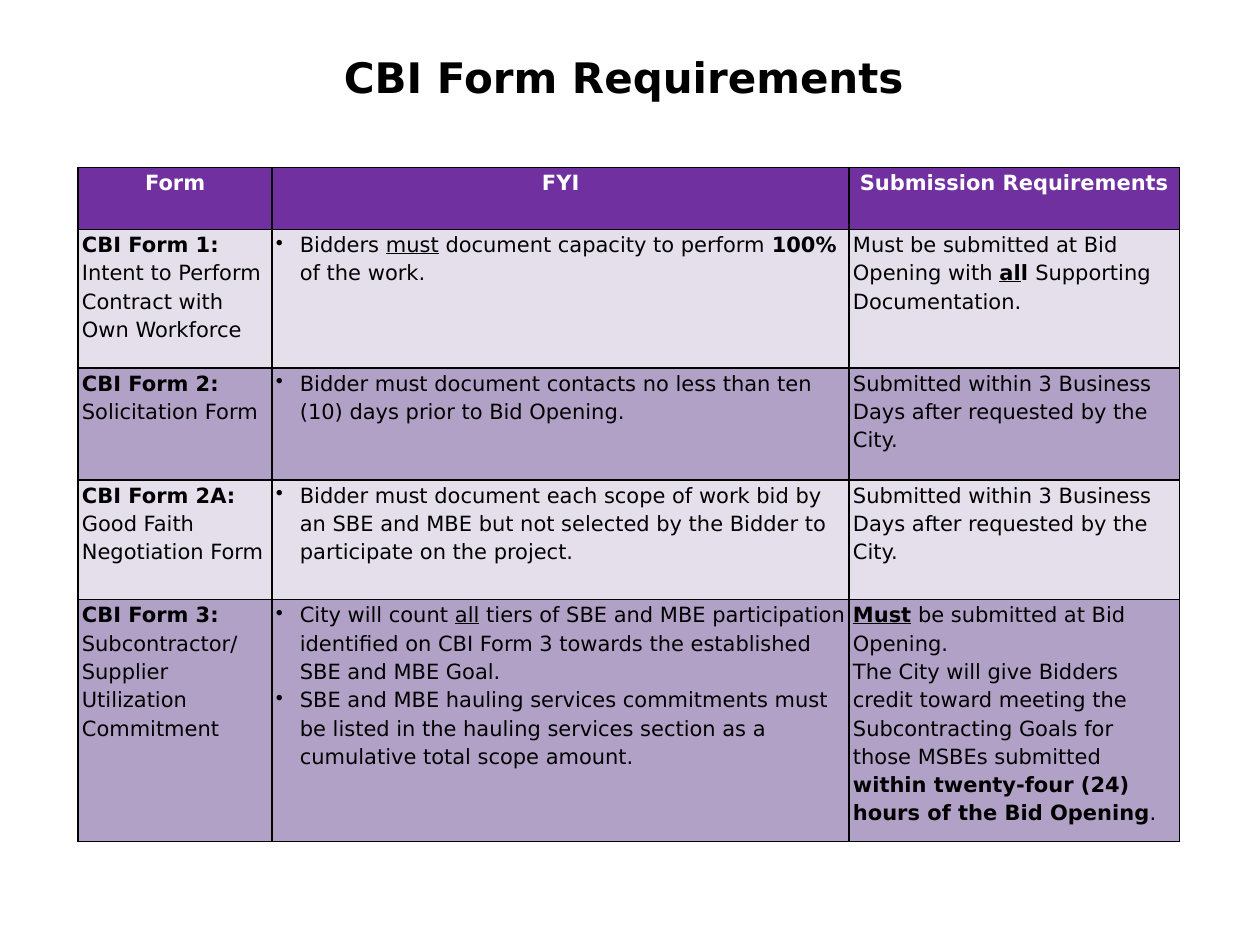
from lxml import etree
from pptx import Presentation
from pptx.dml.color import RGBColor
from pptx.enum import text
from pptx.oxml import ns
from pptx.util import Inches, Pt

FONT = "DejaVu Sans"
BLACK = RGBColor(0x00, 0x00, 0x00)
WHITE = RGBColor(0xFF, 0xFF, 0xFF)
PURPLE = RGBColor(0x70, 0x30, 0xA0)
BANDS = (RGBColor(0xE5, 0xDF, 0xEC), RGBColor(0xB2, 0xA1, 0xC7))

TITLE = "CBI Form Requirements"
HEADERS = ("Form", "FYI", "Submission Requirements")
COLUMN_WIDTHS = (1.54, 4.58, 2.62)
ROW_HEIGHTS = (0.49, 1.1, 0.89, 0.95, 1.92)
FYI_COLUMN = 1

# Each cell lists paragraphs; each paragraph lists (text, style) runs,
# where style holds "b" for bold and "u" for underline.
WITHIN_THREE_DAYS = [
    [("Submitted within 3 Business Days after requested by the City.", "")]]
ROWS = [
    ([[("CBI Form 1:", "b"),
       (" Intent to Perform Contract with Own Workforce", "")]],
     [[("Bidders ", ""), ("must", "u"),
       (" document capacity to perform ", ""), ("100% ", "b"),
       ("of the work.", "")]],
     [[("Must be submitted at Bid Opening with ", ""), ("al", "bu"),
       ("l ", "b"), ("Supporting Documentation.", "")]]),
    ([[("CBI Form 2: ", "b"), ("Solicitation Form", "")]],
     [[("Bidder must document contacts no less than ten (10) days prior "
        "to Bid Opening.", "")]],
     WITHIN_THREE_DAYS),
    ([[("CBI Form 2A:", "b"), (" Good Faith Negotiation Form", "")]],
     [[("Bidder must document each scope of work bid by an SBE and MBE but "
        "not selected by the Bidder to participate on the project.", "")]],
     WITHIN_THREE_DAYS),
    ([[("CBI Form 3: ", "b"), ("Subcontractor/", "")],
      [("Supplier Utilization Commitment", "")]],
     [[("City will count ", ""), ("all", "u"),
       (" tiers of SBE and MBE participation identified on CBI Form 3 "
        "towards the established SBE and MBE Goal.", "")],
      [("SBE and MBE hauling services commitments must be listed in the "
        "hauling services section as a cumulative total scope amount.", "")]],
     [[("Must", "bu"), (" be submitted at Bid Opening.", "")],
      [("The City will give Bidders credit toward meeting the "
        "Subcontracting Goals for those MSBEs submitted ", ""),
       ("within twenty-four (24) hours of the Bid Opening", "b"),
       (".", "")]]),
]


def set_font(paragraph, size, color):
    paragraph.font.name = FONT
    paragraph.font.size = Pt(size)
    paragraph.font.color.rgb = color


def add_bullet(paragraph):
    properties = paragraph._p.get_or_add_pPr()
    properties.set("marL", str(Inches(0.19)))
    properties.set("indent", str(-Inches(0.19)))
    etree.SubElement(properties, ns.qn("a:buChar"), char="•")


def add_borders(cell):
    properties = cell._tc.get_or_add_tcPr()
    for index, side in enumerate(("lnL", "lnR", "lnT", "lnB")):
        line = etree.Element(ns.qn(f"a:{side}"), w=str(Pt(1)))
        fill = etree.SubElement(line, ns.qn("a:solidFill"))
        etree.SubElement(fill, ns.qn("a:srgbClr"), val=str(BLACK))
        properties.insert(index, line)


def fill_cell(cell, paragraphs, fill, color, centered=False, bulleted=False):
    cell.margin_left = cell.margin_right = Inches(0.03)
    cell.margin_top = cell.margin_bottom = 0
    cell.fill.solid()
    cell.fill.fore_color.rgb = fill
    add_borders(cell)
    frame = cell.text_frame
    for index, runs in enumerate(paragraphs):
        paragraph = frame.add_paragraph() if index else frame.paragraphs[0]
        paragraph.line_spacing = 1.15
        if centered:
            paragraph.alignment = text.PP_ALIGN.CENTER
        if bulleted:
            add_bullet(paragraph)
        set_font(paragraph, 12, color)
        for words, style in runs:
            run = paragraph.add_run()
            run.text = words
            run.font.bold = "b" in style
            run.font.underline = "u" in style


def add_title(slide):
    box = slide.shapes.add_textbox(
        Inches(2.24), Inches(0.33), Inches(5.42), Inches(1))
    frame = box.text_frame
    frame.word_wrap = True
    frame.margin_top = Inches(0.08)
    paragraph = frame.paragraphs[0]
    paragraph.text = TITLE
    paragraph.alignment = text.PP_ALIGN.CENTER
    set_font(paragraph, 24, BLACK)
    paragraph.font.bold = True


def add_requirements_table(slide):
    table = slide.shapes.add_table(
        len(ROW_HEIGHTS), len(COLUMN_WIDTHS), Inches(0.62), Inches(1.33),
        Inches(sum(COLUMN_WIDTHS)), Inches(sum(ROW_HEIGHTS))).table
    for column, width in zip(table.columns, COLUMN_WIDTHS):
        column.width = Inches(width)
    for row, height in zip(table.rows, ROW_HEIGHTS):
        row.height = Inches(height)

    for column, header in enumerate(HEADERS):
        fill_cell(table.cell(0, column), [[(header, "b")]], PURPLE, WHITE,
                  centered=True)
    for row, cells in enumerate(ROWS):
        for column, paragraphs in enumerate(cells):
            fill_cell(table.cell(row + 1, column), paragraphs,
                      BANDS[row % 2], BLACK, bulleted=column == FYI_COLUMN)


def main():
    presentation = Presentation()
    presentation.slide_width = Inches(10)
    presentation.slide_height = Inches(7.5)
    slide = presentation.slides.add_slide(presentation.slide_layouts[6])
    add_requirements_table(slide)
    add_title(slide)
    presentation.save("out.pptx")


if __name__ == "__main__":
    main()
